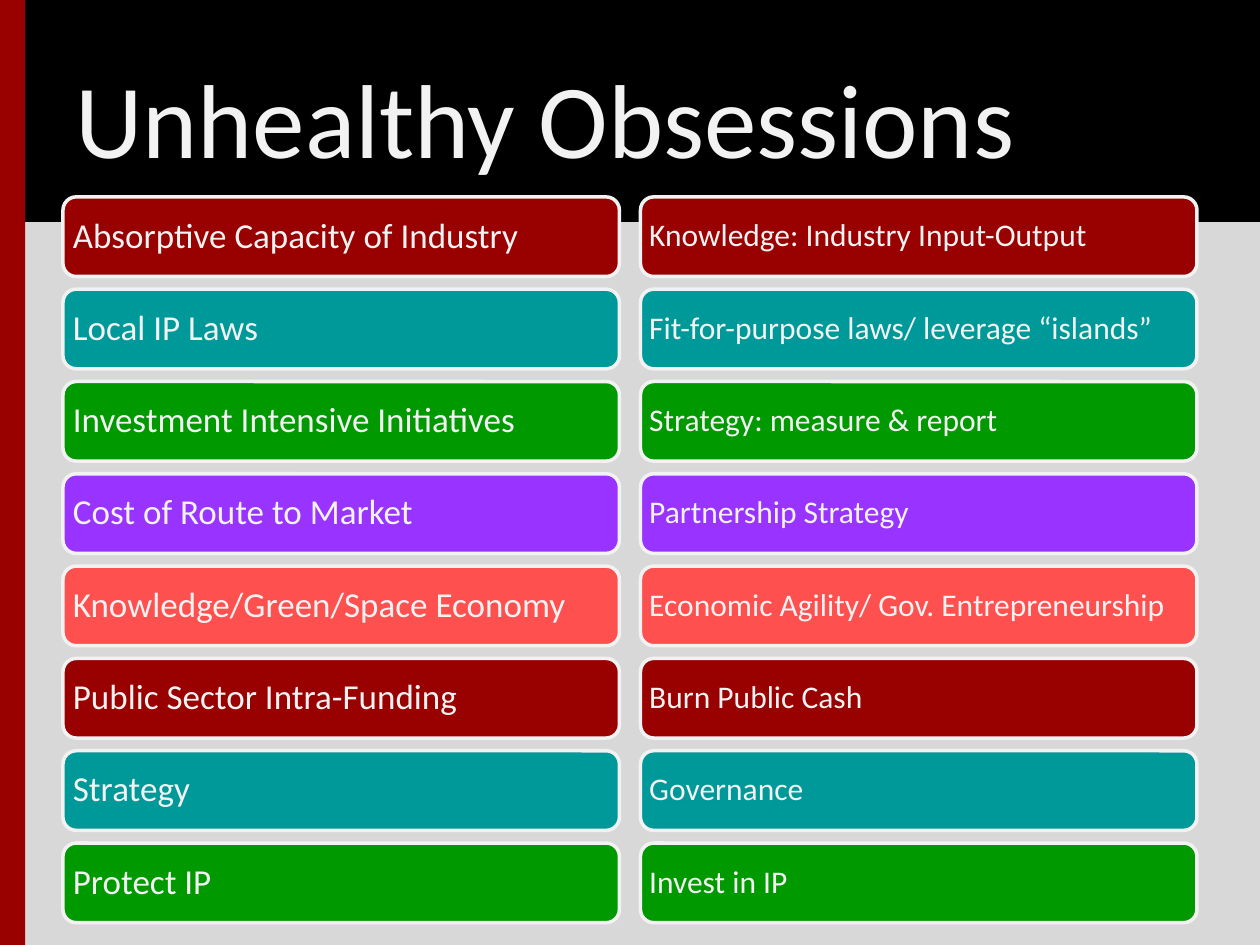
from pptx import Presentation
from pptx.dml.color import RGBColor
from pptx.enum.shapes import MSO_SHAPE
from pptx.enum.text import MSO_ANCHOR, PP_ALIGN
from pptx.util import Pt

HUES = {
    "back": "D8D8D8", "black": "000000", "pale": "F2F2F2", "red": "990000",
    "teal": "009999", "green": "009900", "violet": "9933FF", "coral": "FF5050",
}
TITLE = "Unhealthy Obsessions"
CYCLE = ["red", "teal", "green", "violet", "coral"]
ROWS = [
    ("Absorptive Capacity of Industry", "Knowledge: Industry Input-Output"),
    ("Local IP Laws", "Fit-for-purpose laws/ leverage “islands”"),
    ("Investment Intensive Initiatives", "Strategy: measure & report"),
    ("Cost of Route to Market", "Partnership Strategy"),
    ("Knowledge/Green/Space Economy", "Economic Agility/ Gov. Entrepreneurship"),
    ("Public Sector Intra-Funding", "Burn Public Cash"),
    ("Strategy", "Governance"),
    ("Protect IP", "Invest in IP"),
]
COLS = [{"left": 36, "size": 20, "inset": 3.5}, {"left": 366, "size": 18, "inset": 2.8}]
TOP, STEP, WIDE, HIGH = 112.5, 52.75, 318, 45.5


def tint(name):
    return RGBColor.from_string(HUES[name])


def block(slide, kind, spot, fill, line=None):
    shape = slide.shapes.add_shape(kind, *map(Pt, spot))
    shape.shadow.inherit = False
    shape.fill.solid()
    shape.fill.fore_color.rgb = tint(fill)
    if line:
        shape.line.color.rgb = tint(line)
        shape.line.width = Pt(2)
    else:
        shape.line.fill.background()
    return shape


def write(shape, text, size, inset=None, spacing=None):
    frame = shape.text_frame
    frame.word_wrap = True
    frame.vertical_anchor = MSO_ANCHOR.MIDDLE
    if inset is not None:
        for side in ("left", "top", "right", "bottom"):
            setattr(frame, f"margin_{side}", Pt(inset))
    para = frame.paragraphs[0]
    para.text = text
    para.alignment = PP_ALIGN.LEFT
    if spacing:
        para.line_spacing = spacing
    for key, value in {"name": "Calibri", "size": Pt(size)}.items():
        setattr(para.font, key, value)
    para.font.color.rgb = tint("pale")


def main():
    deck = Presentation()
    deck.slide_width, deck.slide_height = Pt(720), Pt(540)
    slide = deck.slides.add_slide(deck.slide_layouts[6])
    slide.background.fill.solid()
    slide.background.fill.fore_color.rgb = tint("back")

    block(slide, MSO_SHAPE.RECTANGLE, (0, 0, 720, 126), "black", "black")
    block(slide, MSO_SHAPE.RECTANGLE, (0, 0, 14.4, 540), "red")
    write(slide.shapes.add_textbox(Pt(36), Pt(21.6), Pt(608), Pt(90)), TITLE, 60)

    for c, col in enumerate(COLS):
        for r, row in enumerate(ROWS):
            spot = (col["left"], TOP + r * STEP, WIDE, HIGH)
            hue = CYCLE[r % len(CYCLE)]
            bar = block(slide, MSO_SHAPE.ROUNDED_RECTANGLE, spot, hue, "pale")
            write(bar, row[c], col["size"], col["inset"], 0.9)

    deck.save("out.pptx")


if __name__ == "__main__":
    main()
